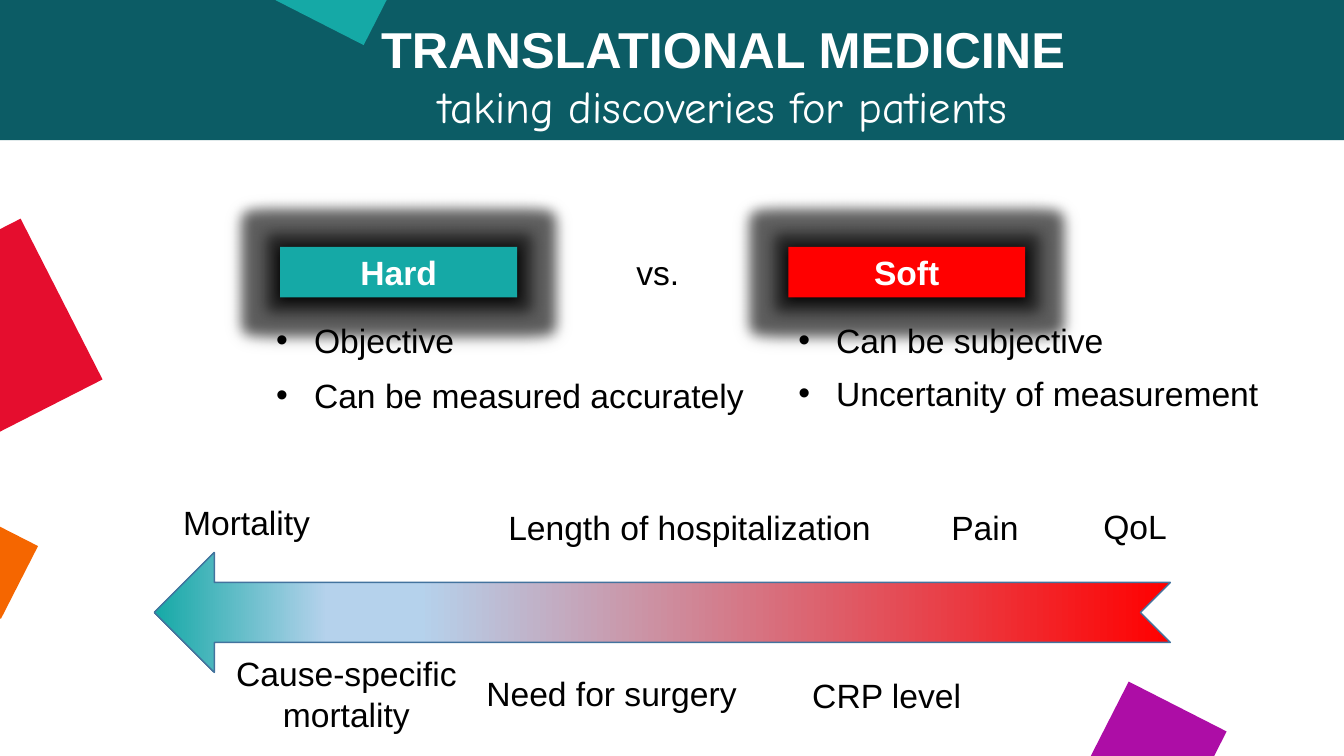
from dataclasses import dataclass
from lxml.etree import fromstring
from pptx import Presentation
from pptx.dml.color import RGBColor
from pptx.enum.shapes import MSO_SHAPE as Preset
from pptx.enum.text import MSO_ANCHOR as Anchor, MSO_AUTO_SIZE as AutoSize, PP_ALIGN as Align
from pptx.oxml.ns import qn
from pptx.util import Inches, Pt


@dataclass(frozen=True)
class Theme:
    band: str = "0C5C65"
    teal: str = "15A9A6"
    crimson: str = "E50D2E"
    purple: str = "AD0DA6"
    orange: str = "F56600"
    red: str = "FF0000"
    pale: str = "B5D2EC"
    outline: str = "43739E"
    white: str = "FFFFFF"
    black: str = "000000"
    font: str = "Arial"
    script_font: str = "Comic Neue"
    title_size: int = 36
    subtitle_size: int = 32
    text_size: int = 24


theme = Theme()
DRAWING = 'xmlns:a="http://schemas.openxmlformats.org/drawingml/2006/main"'

presentation = Presentation()
presentation.slide_width = Inches(13.33)
presentation.slide_height = Inches(7.5)
slide = presentation.slides.add_slide(presentation.slide_layouts[3])
shapes = slide.shapes
title, hard_list, soft_list = slide.placeholders


def share(left, top, width, height):
    column = presentation.slide_width / 100
    row = presentation.slide_height / 100
    return int(left * column), int(top * row), int(width * column), int(height * row)


def write(shape, text, size=theme.text_size, color=theme.black, font=theme.font,
          bold=False, align=Align.CENTER, gap=0, wrap=True, anchor=Anchor.TOP):
    frame = shape.text_frame
    frame.auto_size = AutoSize.NONE
    frame.word_wrap = wrap
    frame.vertical_anchor = anchor
    for line in text.split("\n"):
        first = not frame.text
        paragraph = frame.paragraphs[0] if first else frame.add_paragraph()
        paragraph.text = line
        paragraph.alignment = align
        paragraph.space_before = Pt(0 if first else gap)
        paragraph.font.size = Pt(size)
        paragraph.font.name = font
        paragraph.font.bold = bold
        paragraph.font.color.rgb = RGBColor.from_string(color)


decorations = [
    (theme.band, 0, (0, 0, 100, 18.53)),
    (theme.crimson, 333, (-8.18, 33.07, 13.5, 23.87)),
    (theme.purple, 27, (81.68, 92.67, 8.18, 14.53)),
    (theme.orange, 27, (-4.58, 69.07, 6.38, 10.8)),
    (theme.teal, 27, (21.83, -9.73, 7.35, 13.47)),
]
for color, rotation, area in decorations:
    block = shapes.add_shape(Preset.RECTANGLE, *share(*area))
    block.shadow.inherit = False
    block.fill.solid()
    block.fill.fore_color.rgb = RGBColor.from_string(color)
    block.line.fill.background()
    block.rotation = rotation

for name, color, left in [("Hard", theme.teal, 20.85), ("Soft", theme.red, 58.65)]:
    card = shapes.add_shape(Preset.RECTANGLE, *share(left, 32.67, 17.63, 6.67))
    card.fill.solid()
    card.fill.fore_color.rgb = RGBColor.from_string(color)
    card.line.fill.background()
    card.element.spPr.append(fromstring(
        f'<a:effectLst {DRAWING}><a:glow rad="{Pt(18)}"><a:srgbClr val="{theme.black}">'
        f'<a:alpha val="40000"/></a:srgbClr></a:glow>'
        f'<a:outerShdw blurRad="{Pt(8.5)}" dist="{Pt(1)}" dir="5400000" algn="ctr">'
        f'<a:srgbClr val="{theme.black}"/></a:outerShdw></a:effectLst>'))
    write(card, name, color=theme.white, bold=True, anchor=Anchor.MIDDLE)

for placeholder, area in [
    (title, (27.53, 1.73, 52.58, 17.87)),
    (hard_list, (19.8, 41.6, 37.5, 13.8)),
    (soft_list, (58.65, 41.6, 37.5, 13.8)),
]:
    placeholder.left, placeholder.top, placeholder.width, placeholder.height = share(*area)
    placeholder.element.getparent().append(placeholder.element)

write(title, "TRANSLATIONAL MEDICINE", size=theme.title_size, color=theme.white, bold=True)
write(title, "taking discoveries for patients", size=theme.subtitle_size,
      color=theme.white, font=theme.script_font)
write(hard_list, "Objective\nCan be measured accurately", align=Align.LEFT, gap=10.5)
write(soft_list, "Can be subjective\nUncertanity of measurement", align=Align.LEFT, gap=9)

arrow = shapes.add_shape(Preset.NOTCHED_RIGHT_ARROW, *share(11.48, 73.07, 75.6, 15.87))
arrow.shadow.inherit = False
arrow.rotation = 180
arrow.line.color.rgb = RGBColor.from_string(theme.outline)
arrow.line.width = Pt(1)
stops = "".join(
    f'<a:gs pos="{position * 1000}"><a:srgbClr val="{color}"/></a:gs>'
    for position, color in [(0, theme.red), (74, theme.pale), (83, theme.pale), (100, theme.teal)])
arrow.element.spPr.find(qn("a:prstGeom")).addnext(fromstring(
    f'<a:gradFill {DRAWING} rotWithShape="1"><a:gsLst>{stops}</a:gsLst>'
    f'<a:lin ang="0" scaled="0"/></a:gradFill>'))

labels = [
    ("vs.", 46.58, 32.67, 4.73),
    ("Mortality", 12.83, 65.73, 11.03),
    ("Length of hospitalization", 36.9, 66.4, 28.8),
    ("Pain", 69.98, 66.4, 6.6),
    ("QoL", 81.3, 66.27, 6.3),
    ("Cause-specific\nmortality", 16.73, 85.73, 18.08),
    ("Need for surgery", 35.33, 88.4, 20.33),
    ("CRP level", 59.63, 88.67, 12.68),
]
for text, left, top, width in labels:
    height = 6.67 + 5.4 * text.count("\n")
    label = shapes.add_textbox(*share(left, top, width, height))
    write(label, text, wrap=False)

presentation.save("out.pptx")
